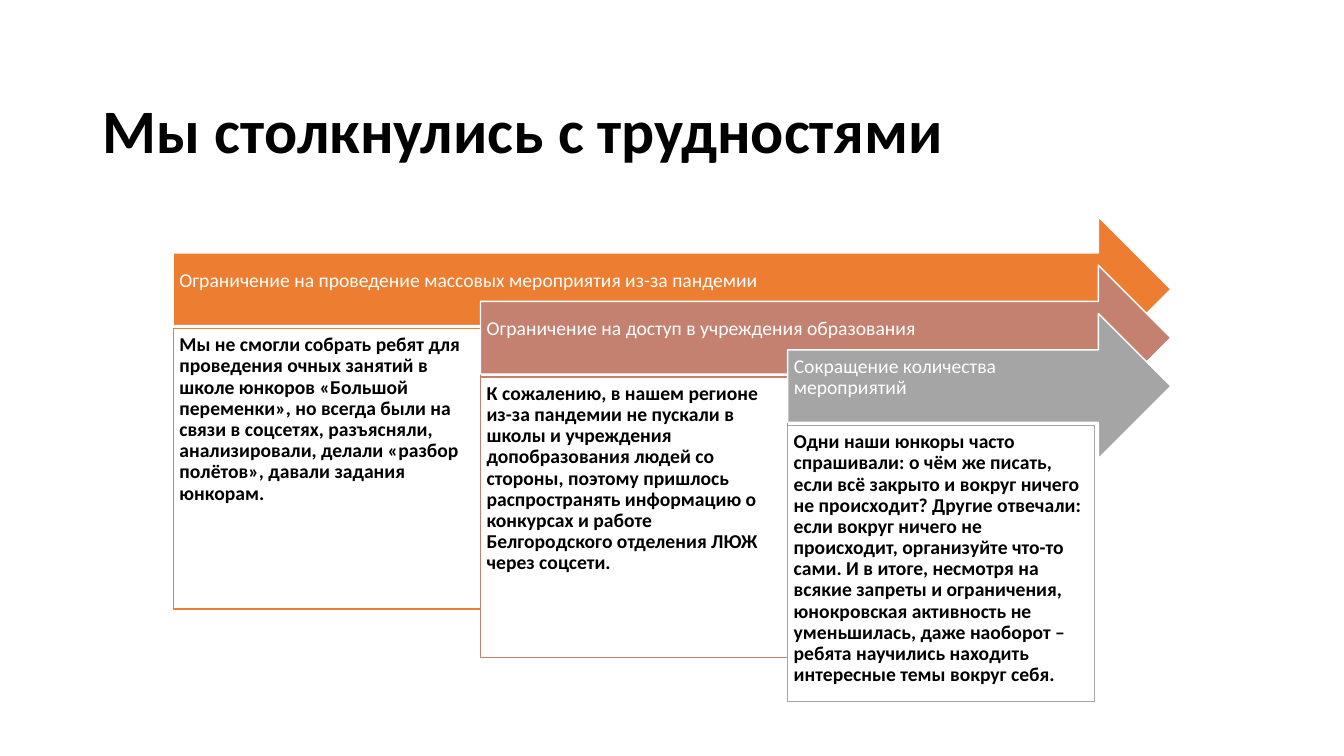
from pptx import Presentation
from pptx.dml.color import RGBColor
from pptx.enum import shapes, text
from pptx.util import Pt

WHITE = RGBColor(0xFF, 0xFF, 0xFF)
BLACK = RGBColor(0x00, 0x00, 0x00)
ORANGE = RGBColor(0xED, 0x7D, 0x31)
ROSE = RGBColor(0xC4, 0x81, 0x70)
GRAY = RGBColor(0xA5, 0xA5, 0xA5)

TITLE = "Мы столкнулись с трудностями"
# heading, details, colour, panel height
DIFFICULTIES = [
    ("Ограничение на проведение массовых мероприятия из-за пандемии",
     "Мы не смогли собрать ребят для проведения очных занятий в школе юнкоров "
     "«Большой переменки», но всегда были на связи в соцсетях, разъясняли, "
     "анализировали, делали «разбор полётов», давали задания юнкорам.",
     ORANGE, 200.2),
    ("Ограничение на доступ в учреждения образования",
     "К сожалению, в нашем регионе из-за пандемии не пускали в школы и учреждения "
     "допобразования людей со стороны, поэтому пришлось распространять информацию "
     "о конкурсах и работе Белгородского отделения ЛЮЖ через соцсети.",
     ROSE, 200.2),
    ("Сокращение количества мероприятий",
     "Одни наши юнкоры часто спрашивали: о чём же писать, если всё закрыто и вокруг "
     "ничего не происходит? Другие отвечали: если вокруг ничего не происходит, "
     "организуйте что-то сами. И в итоге, несмотря на всякие запреты и ограничения, "
     "юнокровская активность не уменьшилась, даже наоборот – ребята научились "
     "находить интересные темы вокруг себя.",
     GRAY, 197.3),
]

LEFT, TOP = 123.8, 154.8
PANEL_W, STEP_Y = 219.4, 34.6
ARROW_RIGHT, ARROW_H = 836.4, 103.7
PANEL_DROP = 80


def write(sp, content, size=14, color=BLACK, bold=False,
          anchor=text.MSO_ANCHOR.TOP, insets=(4.4, 4.4, 4.4, 4.4)):
    tf = sp.text_frame
    tf.word_wrap = True
    tf.auto_size = text.MSO_AUTO_SIZE.NONE
    tf.vertical_anchor = anchor
    tf.margin_left, tf.margin_top, tf.margin_right, tf.margin_bottom = map(Pt, insets)
    p = tf.paragraphs[0]
    p.alignment = text.PP_ALIGN.LEFT
    p.line_spacing = 0.9
    r = p.add_run()
    r.text = content
    r.font.name, r.font.size, r.font.bold = "Calibri", Pt(size), bold
    r.font.color.rgb = color


def add_block(s, kind, box, fill, line):
    sp = s.shapes.add_shape(kind, *map(Pt, box))
    sp.shadow.inherit = False
    sp.fill.solid()
    sp.fill.fore_color.rgb = fill
    sp.line.color.rgb = line
    sp.line.width = Pt(1)
    return sp


def main():
    prs = Presentation()
    prs.slide_width, prs.slide_height = Pt(960), Pt(540)
    s = prs.slides.add_slide(prs.slide_layouts[5])

    title = s.shapes.title
    title.left, title.top, title.width, title.height = map(Pt, (66.2, 105.1, 828, 28.8))
    write(title, TITLE, size=44.1, bold=True, anchor=text.MSO_ANCHOR.BOTTOM,
          insets=(7.2, 3.6, 7.2, 14.4))

    for i, (heading, details, color, panel_h) in enumerate(DIFFICULTIES):
        x, y = LEFT + i * PANEL_W, TOP + i * STEP_Y
        arrow = add_block(s, shapes.MSO_SHAPE.RIGHT_ARROW,
                          (x, y, ARROW_RIGHT - x, ARROW_H), color, WHITE)
        write(arrow, heading, color=WHITE, anchor=text.MSO_ANCHOR.MIDDLE,
              insets=(4.4, 4.4, 20, 16.4))
        panel = add_block(s, shapes.MSO_SHAPE.RECTANGLE,
                          (x, y + PANEL_DROP, PANEL_W, panel_h), WHITE, color)
        write(panel, details, bold=True)

    prs.save("out.pptx")


if __name__ == "__main__":
    main()
